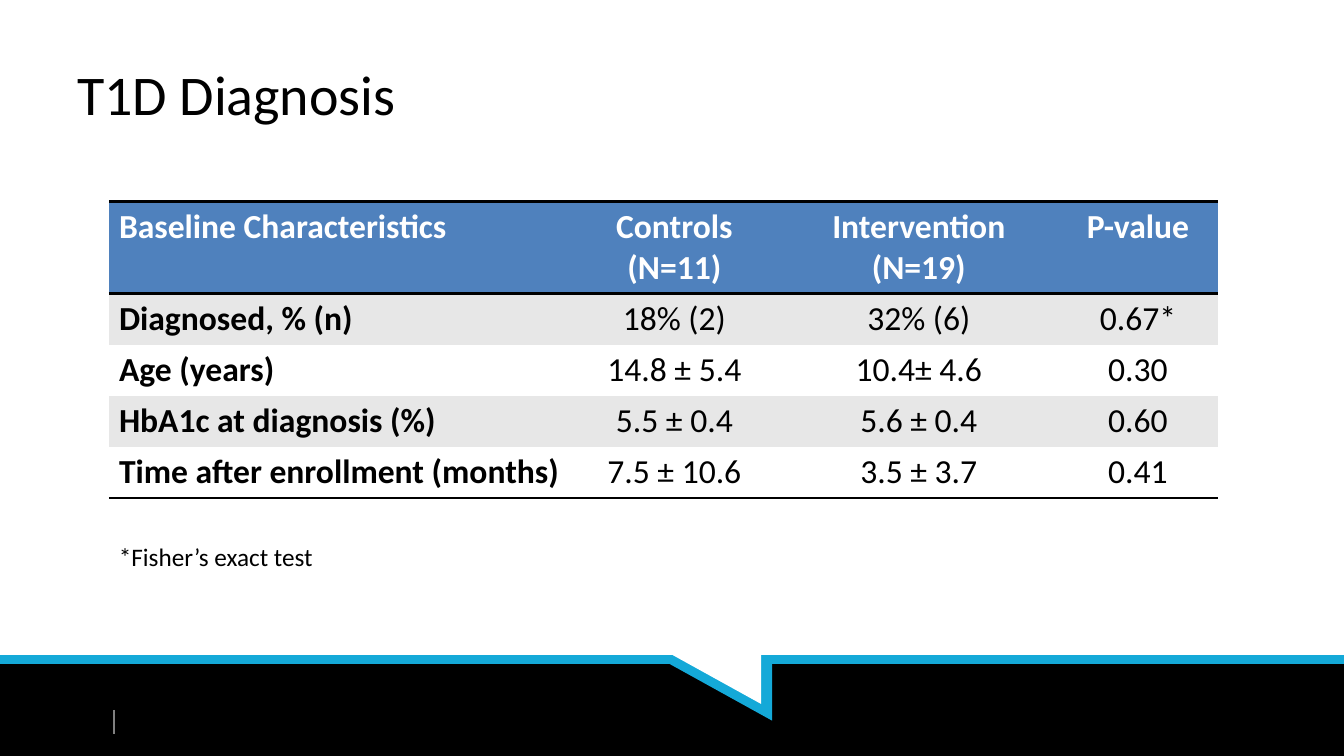
from dataclasses import dataclass

from lxml import etree
from pptx import Presentation
from pptx import util as u
from pptx.dml.color import RGBColor
from pptx.enum import shapes, text
from pptx.oxml.ns import qn

Pt = u.Pt


@dataclass(frozen=True)
class Theme:
    font: str = "Calibri"
    black: str = "000000"
    white: str = "FFFFFF"
    cyan: str = "14A9D8"
    blue: str = "4F81BD"
    band: str = "E7E7E7"
    gray: str = "808080"
    title: int = 40
    body: int = 24
    note: int = 18


class Deck:
    def __init__(self, theme):
        self.theme = theme
        self.prs = Presentation()
        self.prs.slide_width, self.prs.slide_height = Pt(960), Pt(540)
        self.slide = self.prs.slides.add_slide(self.prs.slide_layouts[6])

    def shape(self, kind, box, color, turn=0):
        item = self.slide.shapes.add_shape(kind, *map(Pt, box))
        item.shadow.inherit = False
        item.fill.solid()
        item.fill.fore_color.rgb = RGBColor.from_string(color)
        item.line.fill.background()
        item.rotation = turn

    def line(self, start, end, color, width):
        item = self.slide.shapes.add_connector(
            shapes.MSO_CONNECTOR.STRAIGHT, *map(Pt, start + end))
        item.line.color.rgb = RGBColor.from_string(color)
        item.line.width = Pt(width)
        etree.SubElement(item.element.spPr, qn("a:effectLst"))

    def put(self, frame, words, size, color, bold=False, align=text.PP_ALIGN.LEFT):
        """Put each line of words in its own paragraph."""
        for num, part in enumerate(words.split("\n")):
            para = frame.add_paragraph() if num else frame.paragraphs[0]
            para.alignment = align
            run = para.add_run()
            run.text = part
            run.font.name, run.font.size, run.font.bold = self.theme.font, Pt(size), bold
            run.font.color.rgb = RGBColor.from_string(color)

    def label(self, box, words, size, anchor=text.MSO_ANCHOR.TOP, wrap=True):
        frame = self.slide.shapes.add_textbox(*map(Pt, box)).text_frame
        frame.word_wrap = wrap
        frame.vertical_anchor = anchor
        self.put(frame, words, size, self.theme.black)

    def edge(self, cell, top, bottom):
        """Draw the black rules asked for and clear the other borders."""
        props = cell._tc.get_or_add_tcPr()
        sides = (("L", False), ("R", False), ("T", top), ("B", bottom))
        for num, (side, shown) in enumerate(sides):
            rule = etree.Element(qn(f"a:ln{side}"), w=str(Pt(2)))
            fill = etree.SubElement(rule, qn("a:solidFill" if shown else "a:noFill"))
            if shown:
                etree.SubElement(fill, qn("a:srgbClr"), val=self.theme.black)
            props.insert(num, rule)

    def table(self, left, top, widths, heights, rows, rules):
        """Build a banded table; rules lists the row edges that are drawn."""
        look = self.theme
        grid = self.slide.shapes.add_table(
            len(rows), len(widths), Pt(left), Pt(top),
            Pt(sum(widths)), Pt(sum(heights))).table
        grid.horz_banding = False
        for col, width in zip(grid.columns, widths):
            col.width = Pt(width)
        for r, values in enumerate(rows):
            grid.rows[r].height = Pt(heights[r])
            back = look.blue if r == 0 else (look.white, look.band)[r % 2]
            ink = look.black if r else look.white
            for c, words in enumerate(values):
                cell = grid.cell(r, c)
                cell.fill.solid()
                cell.fill.fore_color.rgb = RGBColor.from_string(back)
                self.edge(cell, r in rules, r + 1 in rules)
                align = text.PP_ALIGN.CENTER if c else text.PP_ALIGN.LEFT
                self.put(cell.text_frame, words, look.body, ink, r == 0 or c == 0, align)


ROWS = [
    ("Baseline Characteristics", "Controls\n(N=11)", "Intervention\n(N=19)", "P-value"),
    ("Diagnosed, % (n)", "18% (2)", "32% (6)", "0.67*"),
    ("Age (years)", "14.8 ± 5.4", "10.4± 4.6", "0.30"),
    ("HbA1c at diagnosis (%)", "5.5 ± 0.4", "5.6 ± 0.4", "0.60"),
    ("Time after enrollment (months)", "7.5 ± 10.6", "3.5 ± 3.7", "0.41"),
]


def main():
    look = Theme()
    deck = Deck(look)
    kind = shapes.MSO_SHAPE

    deck.shape(kind.RECTANGLE, (0, 471, 960, 69), look.black)
    deck.line((0, 471), (960, 471), look.cyan, 6)
    deck.shape(kind.RIGHT_TRIANGLE, (476, 473, 75.6, 41.8), look.cyan, 180)
    deck.shape(kind.RIGHT_TRIANGLE, (468, 461, 75.6, 41.8), look.white, 180)
    deck.line((81.4, 507), (81.4, 524), look.gray, 1)

    deck.label((48, 21.6, 864, 90), "T1D Diagnosis", look.title, text.MSO_ANCHOR.MIDDLE)
    deck.table(77.8, 144, (329, 149.8, 199.4, 113.8), [65.8] + [36.5] * 4,
               ROWS, {0, 1, len(ROWS)})
    deck.label((77.8, 383, 154.8, 28.8), "*Fisher’s exact test", look.note, wrap=False)

    deck.prs.save("out.pptx")


if __name__ == "__main__":
    main()
